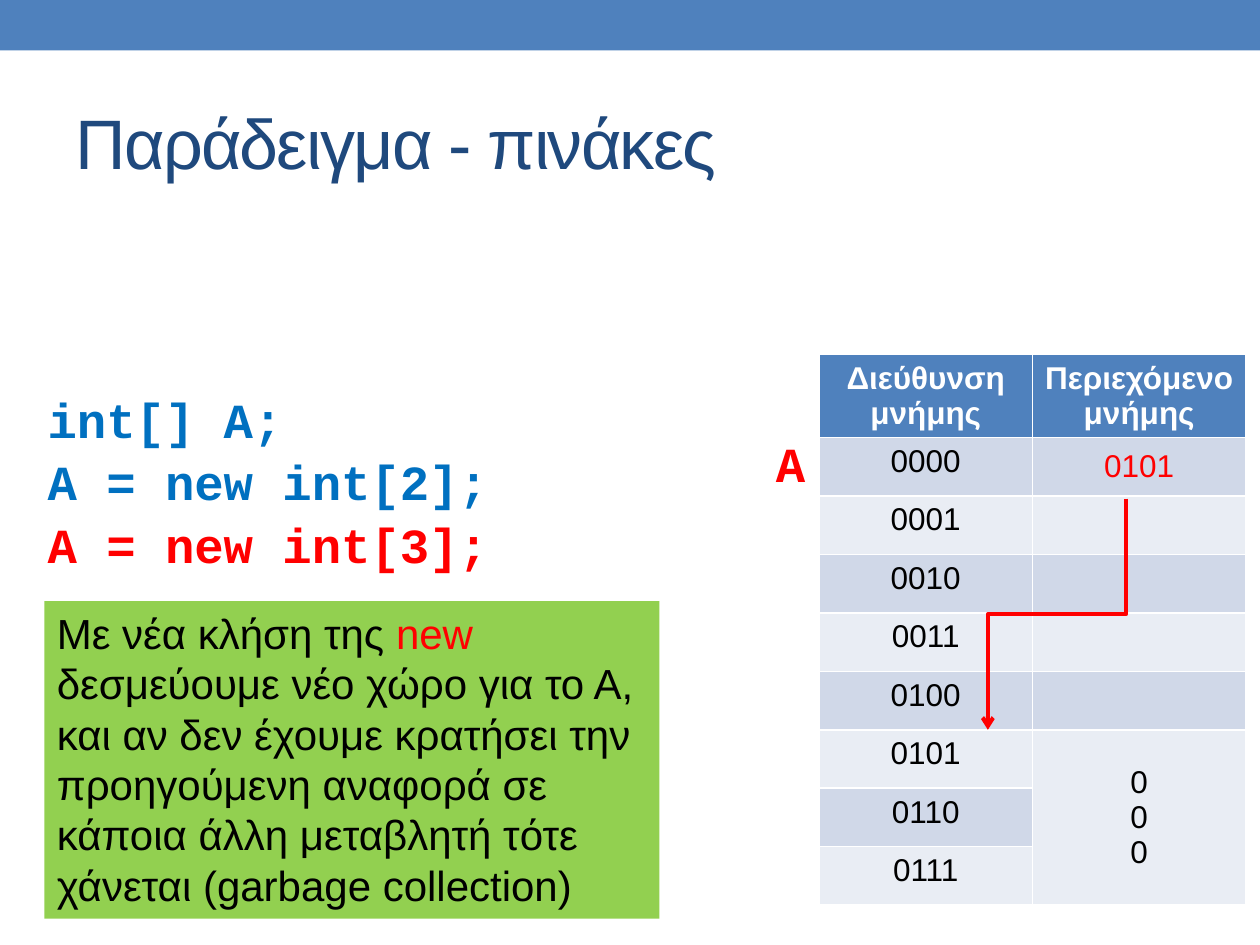
from pptx import Presentation
from pptx.util import Pt
from pptx.dml.color import RGBColor
from pptx.enum.shapes import MSO_SHAPE, MSO_CONNECTOR
from pptx.enum.text import PP_ALIGN, MSO_ANCHOR, MSO_AUTO_SIZE
from pptx.oxml.ns import qn
from lxml.etree import SubElement


def color(hex):
    return RGBColor.from_string(hex)


def write(para, text, hex, **form):
    run = para.add_run()
    run.text = text
    run.font.color.rgb = color(hex)
    for key, value in form.items():
        setattr(run.font, key, value)
    return run


deck = Presentation()
deck.slide_width, deck.slide_height = Pt(720), Pt(540)
slide = deck.slides.add_slide(deck.slide_layouts[1])
shapes = slide.shapes
title, body = slide.placeholders
code = {"name": "Courier New", "size": Pt(28), "bold": True}
note = {"name": "Arial", "size": Pt(24)}
grid = {"name": "Arial", "size": Pt(18)}

band = shapes.add_shape(MSO_SHAPE.RECTANGLE, 0, 0, Pt(720), Pt(28.8))
box = shapes.add_shape(MSO_SHAPE.RECTANGLE, Pt(25.4), Pt(343.5), Pt(351.4), Pt(181.5))
for shape, hex in ((band, "4F81BD"), (box, "92D050")):
    shape.shadow.inherit = False
    shape.fill.solid()
    shape.fill.fore_color.rgb = color(hex)
    shape.line.fill.background()

title.left, title.top, title.width, title.height = Pt(36), Pt(42), Pt(648), Pt(78)
frame = title.text_frame
frame.vertical_anchor = MSO_ANCHOR.MIDDLE
para = frame.paragraphs[0]
para.alignment = PP_ALIGN.LEFT
run = write(para, "Παράδειγμα - πινάκες", "1F497D", name="Arial", size=Pt(40))
run.font._element.set("spc", "-100")

body.left, body.top, body.width, body.height = Pt(20), Pt(219), Pt(397), Pt(105)
frame = body.text_frame
frame.auto_size = MSO_AUTO_SIZE.NONE
lines = [("int[] A;", "0070C0", 6), ("A = new int[2];", "0070C0", 2),
         ("A = new int[3];", "FF0000", 2)]
for row, (text, hex, gap) in enumerate(lines):
    para = frame.add_paragraph() if row else frame.paragraphs[0]
    para.space_before = Pt(gap)
    props = para._p.get_or_add_pPr()
    props.set("marL", "0")
    props.set("indent", "0")
    SubElement(props, qn("a:buNone"))
    write(para, text, hex, **code)

table = shapes.add_table(9, 2, Pt(468), Pt(202.5), Pt(244), Pt(300.6)).table
cells = [["Διεύθυνση μνήμης", "Περιεχόμενο μνήμης"]]
cells += [[f"{num:04b}", ""] for num in range(8)]
cells[1][1] = "0101"
cells[6][1] = "0\n0\n0"
table.cell(6, 1).merge(table.cell(8, 1))
for row, texts in enumerate(cells):
    table.rows[row].height = Pt(33.4)
    for col, text in enumerate(texts):
        cell = table.cell(row, col)
        cell.fill.solid()
        fill = "4F81BD" if row == 0 else "D0D8E8" if row % 2 else "E9EDF4"
        cell.fill.fore_color.rgb = color(fill)
        if row and col:
            cell.vertical_anchor = MSO_ANCHOR.MIDDLE
        hex = "FFFFFF" if row == 0 else "FF0000" if (row, col) == (1, 1) else "000000"
        frame = cell.text_frame
        for place, part in enumerate(text.split("\n")):
            para = frame.add_paragraph() if place else frame.paragraphs[0]
            para.alignment = PP_ALIGN.CENTER
            if part:
                write(para, part, hex, bold=row == 0, **grid)
            else:
                para.font.size = Pt(18)

label = shapes.add_textbox(Pt(436.3), Pt(244), Pt(31.7), Pt(41))
label.text_frame.word_wrap = False
write(label.text_frame.paragraphs[0], "A", "FF0000", **code)

arrow = shapes.add_connector(MSO_CONNECTOR.ELBOW, Pt(538), Pt(311.5), Pt(670), Pt(390.5))
arrow.line.color.rgb = color("FF0000")
arrow.line.width = Pt(2.25)
props = arrow._element.spPr
props.find(qn("a:xfrm")).set("rot", "5400000")
SubElement(props.find(qn("a:ln")), qn("a:tailEnd"), type="arrow")
SubElement(props, qn("a:effectLst"))

frame = box.text_frame
frame.word_wrap = True
frame.vertical_anchor = MSO_ANCHOR.TOP
para = frame.paragraphs[0]
para.alignment = PP_ALIGN.LEFT
write(para, "Με νέα κλήση της ", "000000", **note)
write(para, "new ", "FF0000", **note)
write(para, "δεσμεύουμε νέο χώρο για το Α, και αν δεν έχουμε κρατήσει την "
      "προηγούμενη αναφορά σε κάποια άλλη μεταβλητή τότε χάνεται "
      "(garbage collection)", "000000", **note)

deck.save("out.pptx")
